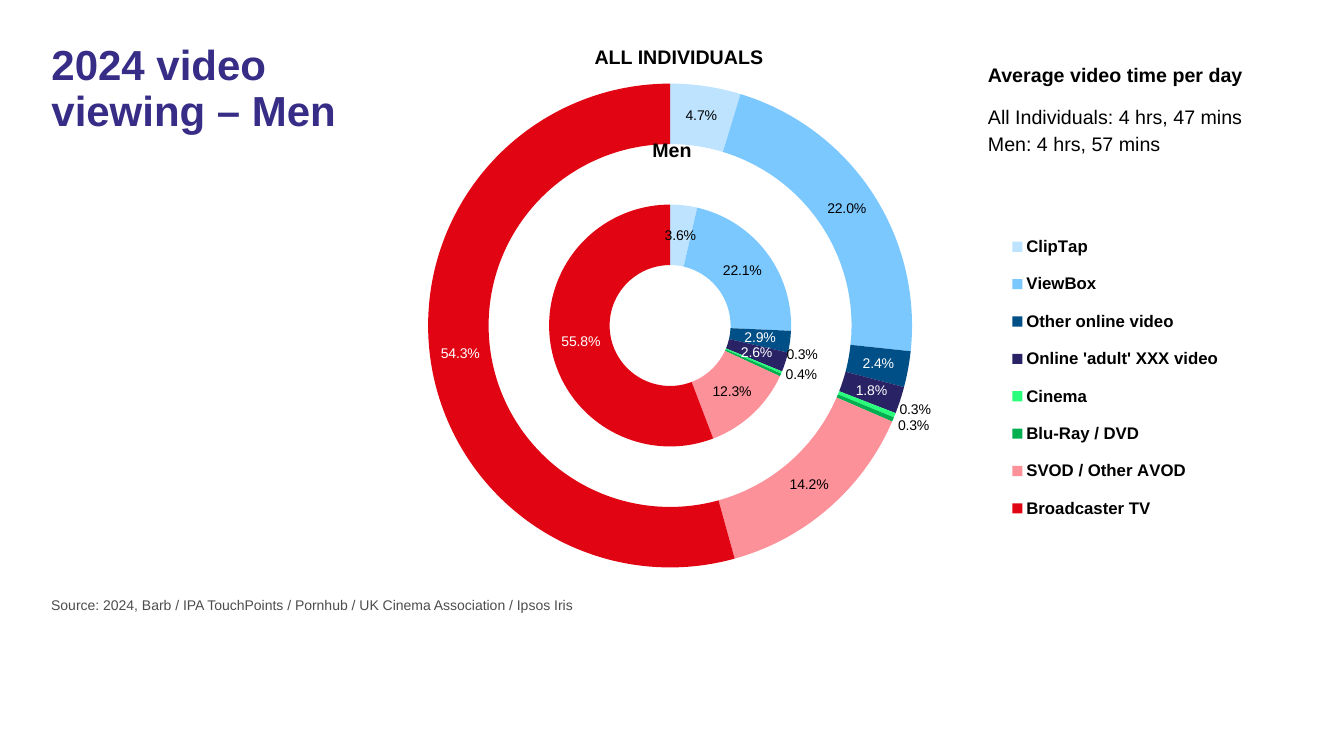
from dataclasses import dataclass, field

from lxml import etree
from pptx import Presentation, util as u
from pptx.chart import data as cd
from pptx.dml.color import RGBColor
from pptx.enum import chart as ec, text as et
from pptx.oxml import parse_xml
from pptx.oxml.ns import nsdecls, qn


@dataclass(frozen=True)
class Theme:
    font: str = "Arial"
    title: str = "372D87"
    ink: str = "000000"
    light: str = "FFFFFF"
    source: str = "4D4D4D"
    title_size: int = 30
    text_size: int = 14
    legend_size: int = 12
    small_size: int = 10


@dataclass(frozen=True)
class Category:
    name: str
    color: str
    white_label: bool = False


@dataclass(frozen=True)
class Ring:
    name: str
    values: tuple
    offsets: dict = field(default_factory=dict)


@dataclass(frozen=True)
class Label:
    text: str
    box: tuple
    size: int
    bold: bool = False
    color: str = "000000"
    align: et.PP_ALIGN = et.PP_ALIGN.LEFT


T = Theme()
CATEGORIES = [
    Category("ClipTap", "BDE3FF"),
    Category("ViewBox", "7BC8FF"),
    Category("Other online video", "004F87", True),
    Category("Online 'adult' XXX video", "292265", True),
    Category("Cinema", "2AFF7C"),
    Category("Blu-Ray / DVD", "00B050"),
    Category("SVOD / Other AVOD", "FD9199"),
    Category("Broadcaster TV", "E10514", True),
]
RINGS = [
    Ring("Series 1", (3.6, 22.1, 2.9, 2.6, 0.3, 0.4, 12.3, 55.8),
         {4: (0.05, -0.01), 5: (0.05, 0.02)}),
    Ring("Series 2", (None,) * len(CATEGORIES)),
    Ring("Series 3", (4.7, 22, 2.4, 1.8, 0.3, 0.3, 14.2, 54.3),
         {4: (0.05, 0.01), 5: (0.05, 0.03)}),
]
CENTER = et.PP_ALIGN.CENTER
LABELS = [
    Label("All Individuals: 4 hrs, 47 mins", (9.7, 0.99, 2.99, 0.34), T.text_size),
    Label("Men: 4 hrs, 57 mins", (9.7, 1.26, 2.82, 0.34), T.text_size),
    Label("Average video time per day", (9.7, 0.58, 3.6, 0.34), T.text_size, True),
    Label("ALL INDIVIDUALS", (5.77, 0.4, 1.93, 0.34), T.text_size, True, align=CENTER),
    Label("Men", (5.97, 1.32, 1.39, 0.34), T.text_size, True, align=CENTER),
    Label("Source: 2024, Barb / IPA TouchPoints / Pornhub / UK Cinema Association / Ipsos Iris",
          (0.41, 5.87, 12.4, 0.33), T.small_size, color=T.source),
]


def style_font(font, size: int, color: str, bold: bool = False) -> None:
    for key, value in {"name": T.font, "size": u.Pt(size), "bold": bold}.items():
        setattr(font, key, value)
    font.color.rgb = RGBColor.from_string(color)


def inches(box: tuple) -> list:
    return [u.Inches(v) for v in box]


def add_label(s, label: Label) -> None:
    tf = s.shapes.add_textbox(*inches(label.box)).text_frame
    tf.word_wrap = True
    p = tf.paragraphs[0]
    p.alignment = label.align
    r = p.add_run()
    r.text = label.text
    style_font(r.font, label.size, label.color, label.bold)


def add_title(s, title: str) -> None:
    sp = s.shapes.title
    for key, value in zip(("left", "top", "width", "height"), inches((0.41, 0.39, 3.82, 2.76))):
        setattr(sp, key, value)
    tf = sp.text_frame
    for key, value in {"text": title, "word_wrap": True, "auto_size": et.MSO_AUTO_SIZE.NONE,
                       "vertical_anchor": et.MSO_ANCHOR.TOP}.items():
        setattr(tf, key, value)
    p = tf.paragraphs[0]
    p.alignment = et.PP_ALIGN.LEFT
    p.line_spacing = 0.9
    style_font(p.runs[0].font, T.title_size, T.title, True)


def manual_layout(values: dict):
    layout = parse_xml(f"<c:layout {nsdecls('c')}><c:manualLayout/></c:layout>")
    for key, value in values.items():
        etree.SubElement(layout[0], qn(f"c:{key}")).set("val", str(value))
    return layout


def place(parent, index: int, values: dict) -> None:
    for old in parent.findall(qn("c:layout")):
        parent.remove(old)
    parent.insert(index, manual_layout(values))


def style_point_label(point, category: Category, offset: tuple | None) -> None:
    label = point.data_label
    style_font(label.font, T.small_size, T.light if category.white_label else T.ink)
    d_lbl = label.font._element.getparent().getparent().getparent().getparent()
    d_lbl.find(qn("c:showVal")).set("val", "0")
    d_lbl.find(qn("c:showPercent")).set("val", "1")
    num_fmt = parse_xml(f'<c:numFmt {nsdecls("c")} formatCode="0.0%" sourceLinked="0"/>')
    d_lbl.insert(1, num_fmt)
    if offset:
        d_lbl.insert(1, manual_layout({"x": offset[0], "y": offset[1]}))


def style_ring(series, ring: Ring) -> None:
    shown = ring.values[0] is not None
    labels = series.data_labels
    for key, value in {"show_value": False, "show_percentage": shown,
                       "number_format": "0.0%", "number_format_is_linked": False}.items():
        setattr(labels, key, value)
    style_font(labels.font, T.small_size, T.light)
    for i, category in enumerate(CATEGORIES):
        point = series.points[i]
        point.format.fill.solid()
        point.format.fill.fore_color.rgb = RGBColor.from_string(category.color)
        point.format.line.fill.background()
        if shown:
            style_point_label(point, category, ring.offsets.get(i))


def add_rings(s) -> None:
    data = cd.CategoryChartData()
    data.categories = [c.name for c in CATEGORIES]
    for ring in RINGS:
        data.add_series(ring.name, ring.values)
    chart = s.shapes.add_chart(ec.XL_CHART_TYPE.DOUGHNUT, *inches((3.19, 0.16, 9.6, 6.08)),
                               data).chart
    style_font(chart.font, 18, T.ink)
    chart.has_title = False
    chart.has_legend = True
    legend = chart.legend
    legend.position = ec.XL_LEGEND_POSITION.RIGHT
    legend.include_in_layout = False
    style_font(legend.font, T.legend_size, T.ink, True)
    place(legend._element, 1, {"xMode": "edge", "yMode": "edge",
                               "x": 0.7, "y": 0.33, "w": 0.24, "h": 0.52})
    plot = chart.plots[0]
    plot.vary_by_categories = True
    plot._element.find(qn("c:holeSize")).set("val", "47")
    place(plot._element.getparent(), 0, {"layoutTarget": "inner", "xMode": "edge", "yMode": "edge",
                                         "x": 0.11, "y": 0.1, "w": 0.5, "h": 0.81})
    for series, ring in zip(plot.series, RINGS):
        style_ring(series, ring)


def main() -> None:
    prs = Presentation()
    prs.slide_width, prs.slide_height = inches((13.33, 7.5))
    s = prs.slides.add_slide(prs.slide_layouts[5])
    add_rings(s)
    add_title(s, "2024 video viewing – Men")
    for label in LABELS:
        add_label(s, label)
    prs.save("out.pptx")


if __name__ == "__main__":
    main()
